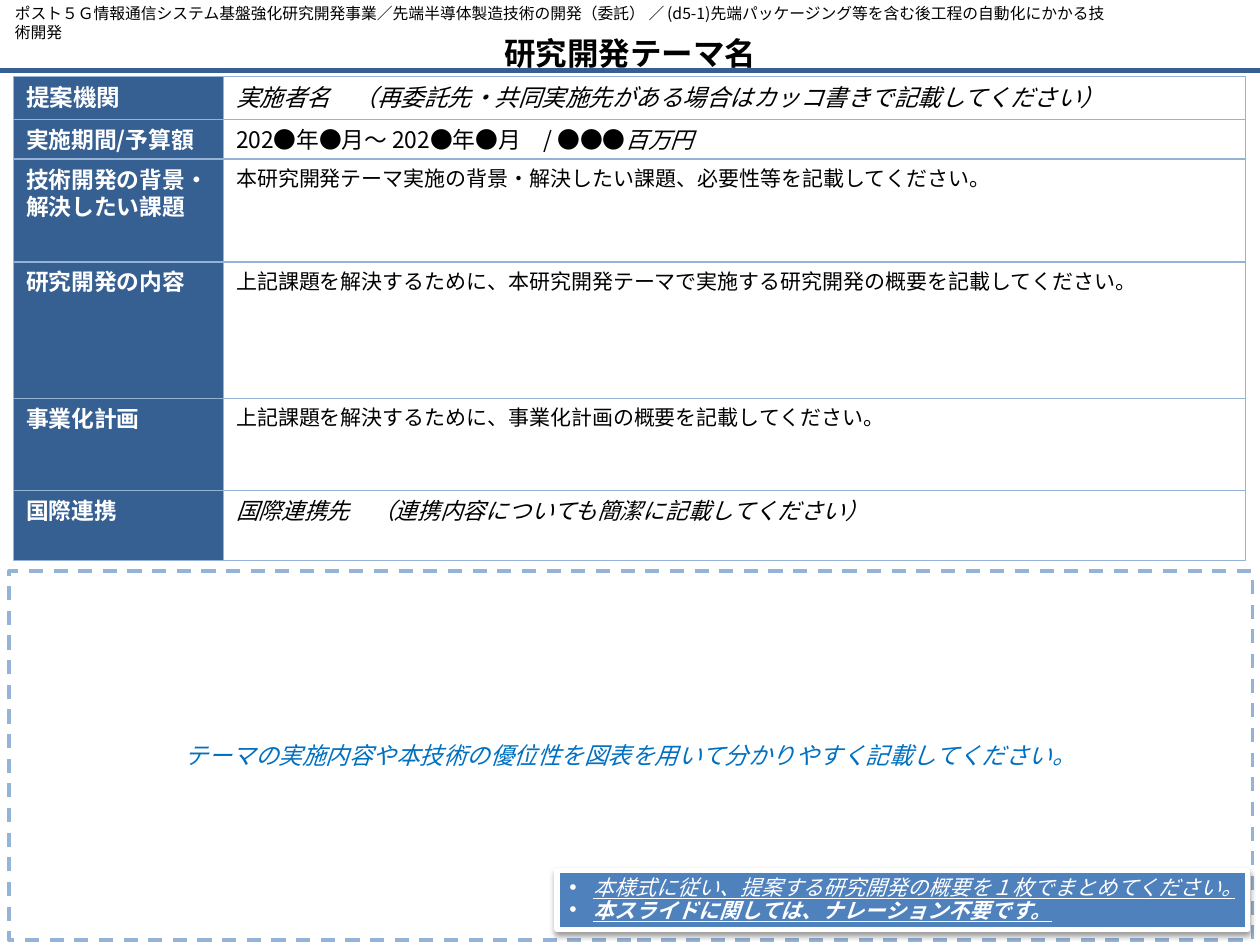
from lxml import etree
from pptx import Presentation
from pptx.dml.color import RGBColor
from pptx.enum.dml import MSO_LINE
from pptx.enum.shapes import MSO_CONNECTOR, MSO_SHAPE
from pptx.enum.text import MSO_ANCHOR, MSO_AUTO_SIZE, PP_ALIGN
from pptx.oxml import parse_xml
from pptx.oxml.ns import nsdecls, qn
from pptx.util import Cm, Pt

RECTANGLE = MSO_SHAPE.RECTANGLE
STRAIGHT = MSO_CONNECTOR.STRAIGHT
DASH = MSO_LINE.DASH
TOP, MIDDLE = MSO_ANCHOR.TOP, MSO_ANCHOR.MIDDLE
LEFT, CENTER = PP_ALIGN.LEFT, PP_ALIGN.CENTER
NO_AUTOFIT = MSO_AUTO_SIZE.NONE

FONT = "Noto Sans CJK JP"
COLORS = {
    "black": "000000",
    "white": "FFFFFF",
    "navy": "376092",
    "border": "95B3D7",
    "hint": "0070C0",
    "note": "4F81BD",
}


def write(shape, text, size=13, color="black", bold=False, italic=False,
          underline=False, font=FONT, align=LEFT, anchor=TOP, new_paragraph=True):
    """Add text to a shape, as a new paragraph or as a further run of the last one."""
    frame = shape.text_frame
    frame.word_wrap = True
    frame.auto_size = NO_AUTOFIT
    frame.vertical_anchor = anchor
    paragraph = frame.paragraphs[-1]
    if new_paragraph and paragraph.runs:
        paragraph = frame.add_paragraph()
    paragraph.alignment = align
    run = paragraph.add_run()
    run.text = text
    run.font.size = Pt(size)
    run.font.name = font
    run.font.bold = bold
    run.font.italic = italic
    run.font.underline = underline
    run.font.color.rgb = RGBColor.from_string(COLORS[color])
    east_asian = etree.SubElement(run.font._element, qn("a:ea"))
    east_asian.set("typeface", FONT)
    return paragraph


def add_box(left, top, width, height, fill=None, line="border", line_width=0.75):
    """Add a rectangle; lengths are in centimetres."""
    shape = slide.shapes.add_shape(RECTANGLE, Cm(left), Cm(top), Cm(width), Cm(height))
    shape.shadow.inherit = False
    if fill:
        shape.fill.solid()
        shape.fill.fore_color.rgb = RGBColor.from_string(COLORS[fill])
    else:
        shape.fill.background()
    shape.line.color.rgb = RGBColor.from_string(COLORS[line])
    shape.line.width = Pt(line_width)
    return shape


presentation = Presentation()
presentation.slide_width = Cm(25.4)
presentation.slide_height = Cm(19.05)
slide = presentation.slides.add_slide(presentation.slide_layouts[5])

# Title and the rule under it
title = slide.shapes.title
title.left, title.top, title.width, title.height = Cm(0), Cm(0.56), Cm(25.4), Cm(1.02)
write(title, "研究開発テーマ名", size=18, bold=True, align=CENTER, anchor=MIDDLE)

rule = slide.shapes.add_connector(STRAIGHT, Cm(0), Cm(1.42), Cm(25.4), Cm(1.42))
rule.line.color.rgb = RGBColor.from_string(COLORS["navy"])
rule.line.width = Pt(3)
etree.SubElement(rule._element.spPr, qn("a:effectLst"))

# Programme name
programme = slide.shapes.add_textbox(Cm(0.05), Cm(-0.05), Cm(22.63), Cm(0.64))
write(programme, "ポスト５Ｇ情報通信システム基盤強化研究開発事業／先端半導体製造技術の開発（委託） ／ "
      "(d5-1)先端パッケージング等を含む後工程の自動化にかかる技術開発", size=9)

# Form rows: top edge, label, label size, entry runs with their format
rows = [
    (1.55, "提案機関", 13.5,
     [("実施者名　（再委託先・共同実施先がある場合はカッコ書きで記載してください）",
       {"size": 13.5, "italic": True})]),
    (2.41, "実施期間/予算額", 13,
     [("202●年●月～ 202●年●月　/ ●●●", {}), ("百万円", {"italic": True})]),
    (3.21, "技術開発の背景・解決したい課題", 13,
     [("本研究開発テーマ実施の背景・解決したい課題、必要性等を記載してください。", {"size": 12})]),
    (5.28, "研究開発の内容", 13,
     [("上記課題を解決するために、本研究開発テーマで実施する研究開発の概要を記載してください。",
       {"size": 12})]),
    (8.03, "事業化計画", 13,
     [("上記課題を解決するために、事業化計画の概要を記載してください。", {"size": 12})]),
    (9.89, "国際連携", 13,
     [("国際連携先　（連携内容についても簡潔に記載してください）", {"italic": True})]),
]
form_bottom = 11.3
bottoms = [row[0] for row in rows[1:]] + [form_bottom]
label_left, label_width, entry_width = 0.28, 4.23, 20.6

for (top, label, label_size, entry_runs), bottom in zip(rows, bottoms):
    label_box = add_box(label_left, top, label_width, bottom - top, fill="navy")
    write(label_box, label, size=label_size, color="white", bold=True)
    entry_box = add_box(label_left + label_width, top, entry_width, bottom - top)
    for text, text_format in entry_runs:
        write(entry_box, text, new_paragraph=False, **text_format)

# Dashed area for figures
figure_area = add_box(0.18, 11.51, 25.07, 7.44, line_width=2)
figure_area.line.dash_style = DASH
write(figure_area, "テーマの実施内容や本技術の優位性を図表を用いて分かりやすく記載してください。",
      size=13.5, color="hint", italic=True, align=CENTER, anchor=MIDDLE)

# Note with bullets and a soft shadow
note = add_box(11.23, 17.55, 13.92, 1.19, fill="note", line="white", line_width=3)
effects = note._element.spPr.find(qn("a:effectLst"))
effects.append(parse_xml(
    f'<a:outerShdw {nsdecls("a")} blurRad="40000" dist="20000" dir="5400000" rotWithShape="0">'
    f'<a:srgbClr val="{COLORS["black"]}"><a:alpha val="38000"/></a:srgbClr></a:outerShdw>'))
for text, bold in [
    ("本様式に従い、提案する研究開発の概要を１枚でまとめてください。", False),
    ("本スライドに関しては、ナレーション不要です。", True),
]:
    paragraph = write(note, text, size=12, color="white", bold=bold, italic=True,
                      underline=True, font="Arial")
    paragraph.line_spacing = Pt(13)
    properties = paragraph._element.get_or_add_pPr()
    properties.set("marL", str(Cm(0.48)))
    properties.set("indent", str(Cm(-0.48)))
    etree.SubElement(properties, qn("a:buFont")).set("typeface", "Arial")
    etree.SubElement(properties, qn("a:buChar")).set("char", "•")

presentation.save("out.pptx")
